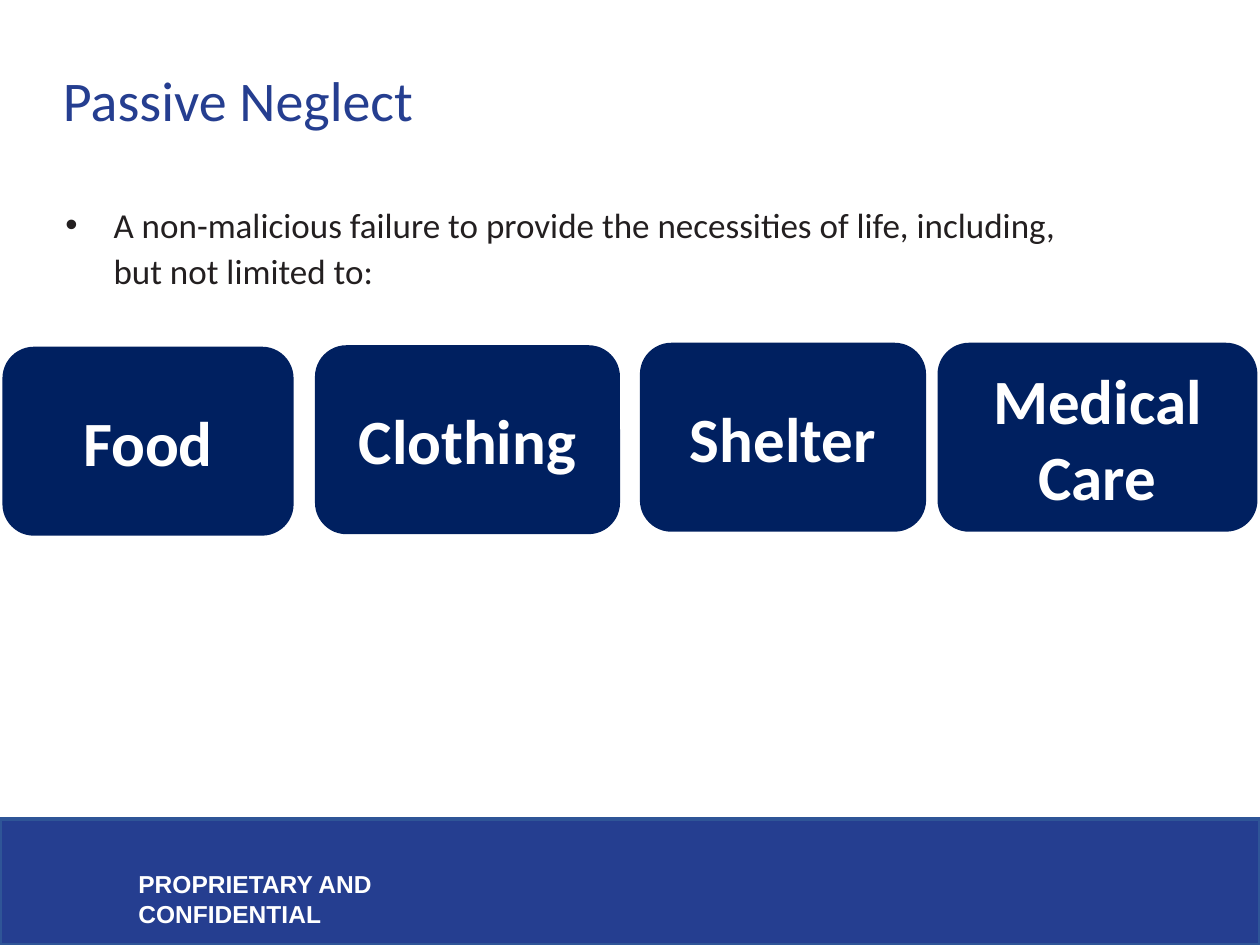
from pptx import Presentation
from pptx.dml.color import RGBColor as RGB
from pptx.enum.shapes import MSO_SHAPE as Shape
from pptx.enum.text import MSO_ANCHOR as Anchor, PP_ALIGN as Align
from pptx.oxml.ns import qn
from pptx.util import Cm, Pt
from lxml import etree

BLUE = RGB(0x25, 0x3E, 0x90)
EDGE = RGB(0x2F, 0x55, 0x97)
NAVY = RGB(0x00, 0x20, 0x60)
INK = RGB(0x23, 0x1F, 0x20)
WHITE = RGB(0xFF, 0xFF, 0xFF)

# Label, left, top and width in cm
NEEDS = [
    ("Food", 0.05, 6.99, 5.87),
    ("Clothing", 6.35, 6.96, 6.15),
    ("Shelter", 12.9, 6.91, 5.77),
    ("Medical Care", 18.9, 6.91, 6.45),
]


def set_font(para, size, color, name="Calibri", bold=False):
    font = para.font
    font.size, font.name, font.bold = Pt(size), name, bold
    font.color.rgb = color


def add_text(slide, text, left, top, width, height, inset=True):
    box = slide.shapes.add_textbox(Cm(left), Cm(top), Cm(width), Cm(height))
    frame = box.text_frame
    frame.word_wrap = True
    if not inset:
        frame.margin_left = frame.margin_right = 0
        frame.margin_top = frame.margin_bottom = 0
    frame.text = text
    return frame


def add_block(slide, kind, left, top, width, height, fill):
    block = slide.shapes.add_shape(
        kind, Cm(left), Cm(top), Cm(width), Cm(height))
    block.shadow.inherit = False
    block.fill.solid()
    block.fill.fore_color.rgb = fill
    block.line.fill.background()
    return block


def add_card(slide, text, left, top, width):
    card = add_block(slide, Shape.ROUNDED_RECTANGLE, left, top, width, 3.81, NAVY)
    frame = card.text_frame
    frame.word_wrap = True
    frame.vertical_anchor = Anchor.MIDDLE
    frame.text = text
    para = frame.paragraphs[0]
    para.alignment = Align.CENTER
    set_font(para, 36, WHITE, bold=True)


def add_bullet(para, left, hang):
    props = para._p.get_or_add_pPr()
    props.set("marL", str(Cm(left)))
    props.set("indent", str(-Cm(hang)))
    etree.SubElement(props, qn("a:buFont")).set("typeface", "Arial")
    etree.SubElement(props, qn("a:buChar")).set("char", "•")


def add_footer(slide):
    band = add_block(slide, Shape.RECTANGLE, 0, 16.51, 25.4, 2.54, BLUE)
    band.line.color.rgb = EDGE
    band.line.width = Pt(2)
    frame = add_text(slide, "PROPRIETARY AND CONFIDENTIAL",
                     2.54, 17.4, 8.41, 0.86)
    set_font(frame.paragraphs[0], 14, WHITE, "Arial", True)


def add_title(slide, text):
    frame = add_text(slide, text, 1.27, 1.07, 17.98, 1.6, inset=False)
    frame.vertical_anchor = Anchor.BOTTOM
    para = frame.paragraphs[0]
    para.line_spacing = Pt(31)
    set_font(para, 32, BLUE)


def add_body(slide, text):
    frame = add_text(slide, text, 1.27, 4.01, 20.75, 11.71, inset=False)
    para = frame.paragraphs[0]
    add_bullet(para, 1.02, 0.97)
    para.line_spacing = 1.1
    para.space_after = Pt(2)
    set_font(para, 20, INK)


def main():
    deck = Presentation()
    deck.slide_width, deck.slide_height = Cm(25.4), Cm(19.05)
    slide = deck.slides.add_slide(deck.slide_layouts[6])

    # Footer band
    add_footer(slide)

    # Heading and definition
    add_title(slide, "Passive Neglect")
    add_body(slide, "A non-malicious failure to provide the necessities of "
                    "life, including, but not limited to:")

    # Row of necessities
    for need in NEEDS:
        add_card(slide, *need)

    deck.save("out.pptx")


if __name__ == "__main__":
    main()
